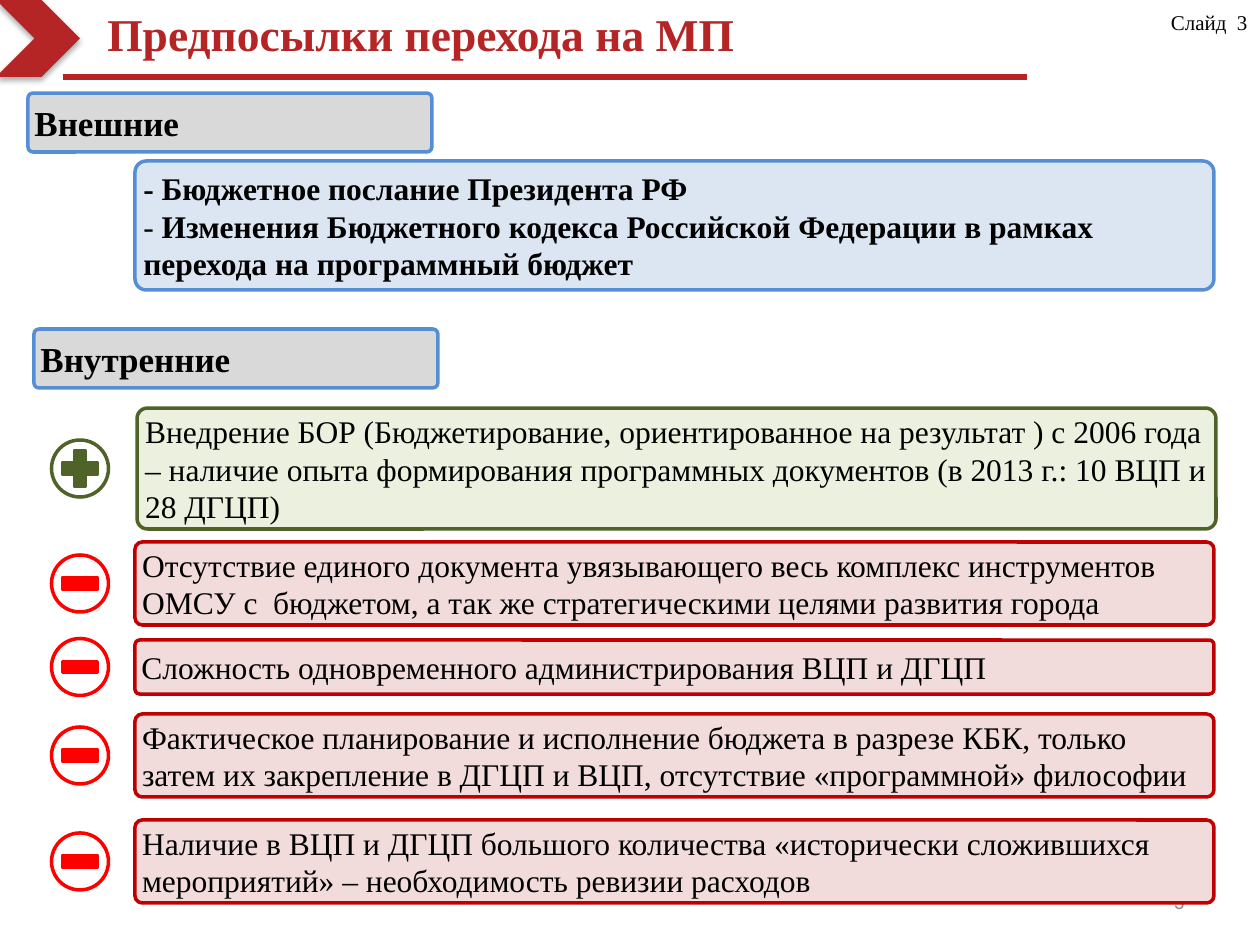
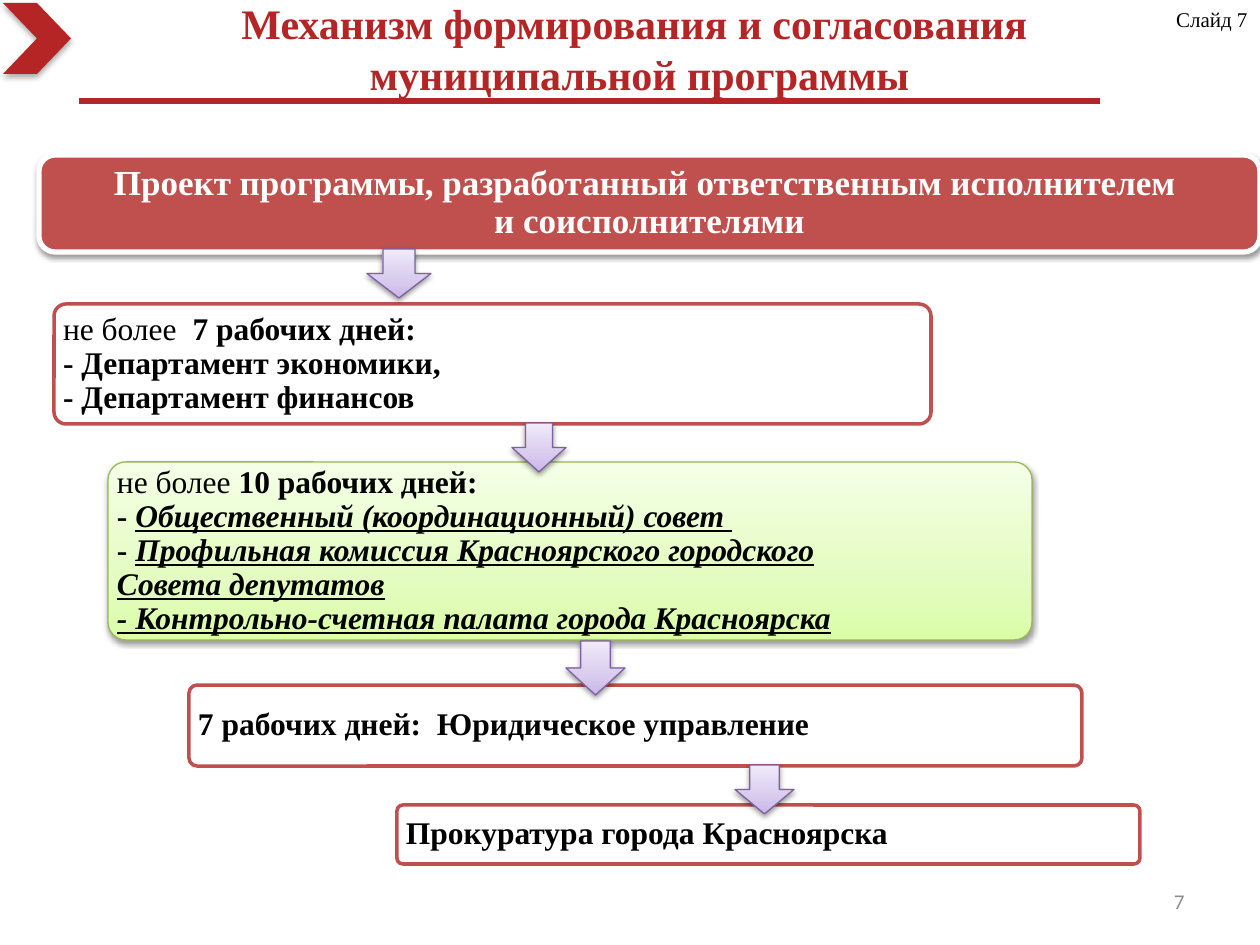
"""Build two slides on the move to municipal programmes."""
import lxml.etree
import pptx
import pptx.dml.color
import pptx.enum.shapes
import pptx.enum.text
import pptx.oxml.ns
import pptx.util

KIND = pptx.enum.shapes.MSO_SHAPE
ALIGN = pptx.enum.text.PP_ALIGN
ANCHOR = pptx.enum.text.MSO_ANCHOR


class Theme:
    font, plain = "Times New Roman", "Calibri"
    small, body, head, title, large = 12, 18, 20, 24, 26
    red, black, white, gray = "B52525", "000000", "FFFFFF", "8C8C8C"
    label = ("D9D9D9", "558ED5")
    blue = ("DCE6F2", "558ED5")
    good = ("EBF1DE", "4F6228")
    bad = ("F2DCDB", "C00000")
    plus, minus = "4F6228", "FF0000"
    step = ("FFFFFF", "C0504D")
    banner = ("C0504D", "FFFFFF")
    lime = ([(0, "DAFDA7"), (35, "E4FCC2"), (100, "F5FFE7")], "98B955")
    arrow = ([(0, "C9B5E8"), (35, "D8CBEE"), (100, "F0EAF9")], "7D60A0")
    deep, soft = (32, 3.5, 2.2), (38, 3.1, 1.6)


REASONS = {
    "title": "Предпосылки перехода на МП",
    "place": (95, 0, 888, 66), "size": Theme.large, "align": ALIGN.LEFT,
    "rule": (63, 1027, 77), "mark": (-4, 0, 84, 77),
    "label": "Слайд  3", "top": 3, "number": "3",
}
HEADS = [("Внешние", 28, 93), ("Внутренние", 34, 329)]
OUTER = [
    [("b", "- Бюджетное послание Президента РФ")],
    [("", "- "), ("b", "Изменения Бюджетного кодекса Российской Федерации в рамках "
                       "перехода на программный бюджет")],
]
INNER = [
    (True, 408, 121, "Внедрение БОР (Бюджетирование, ориентированное на результат ) с 2006 года "
     "– наличие опыта формирования программных документов (в 2013 г.: 10 ВЦП и 28 ДГЦП)"),
    (False, 542, 83, "Отсутствие единого документа увязывающего весь комплекс инструментов "
     "ОМСУ с  бюджетом, а так же стратегическими целями развития города"),
    (False, 640, 54, "Сложность одновременного администрирования ВЦП и ДГЦП"),
    (False, 714, 83, "Фактическое планирование и исполнение бюджета в разрезе КБК, только "
     "затем их закрепление в ДГЦП и ВЦП, отсутствие «программной» философии"),
    (False, 820, 83, "Наличие в ВЦП и ДГЦП большого количества «исторически сложившихся "
     "мероприятий» – необходимость ревизии расходов"),
]

PROCESS = {
    "title": "Механизм формирования и согласования  муниципальной программы",
    "place": (82, 0, 1115, 96), "size": Theme.title, "align": ALIGN.CENTER,
    "rule": (79, 1100, 101), "mark": (3, 3, 68, 71),
    "label": "Слайд 7", "top": 0, "number": "7",
}
DRAFT = "Проект программы, разработанный ответственным исполнителем \nи соисполнителями"
STEPS = [
    ((54, 304, 877, 120), Theme.step, [
        [("", "не более  "), ("b", "7 рабочих дней:\n- Департамент экономики,")],
        [("b", "- Департамент финансов")]]),
    ((108, 462, 924, 178), Theme.lime, [
        [("", "не более"), ("b", " 10 рабочих дней:\n- "),
         ("biu", "Общественный (координационный) совет \n"), ("b", "- "),
         ("biu", "Профильная комиссия Красноярского городского Совета депутатов\n"
                 "- Контрольно-счетная палата города Красноярска")]]),
    ((189, 685, 893, 81), Theme.step, [[("b", "7 рабочих дней:  Юридическое управление")]]),
    ((397, 805, 743, 59), Theme.step, [[("b", "Прокуратура города Красноярска")]]),
]
ARROWS = [(367, 249, 64, 49), (512, 423, 54, 49), (566, 641, 59, 54), (735, 765, 59, 49)]


def px(value):
    """Turn px into EMU."""
    return pptx.util.Emu(round(value * 914400 / 126))


def tint(code):
    """Turn a hex code into a colour."""
    return pptx.dml.color.RGBColor.from_string(code)


def node(parent, tag, **attrs):
    """Add a drawing element under a parent."""
    return lxml.etree.SubElement(parent, pptx.oxml.ns.qn("a:" + tag),
                                 {key: str(value) for key, value in attrs.items()})


def blend(shape, stops):
    """Fill a shape with colour stops that run upwards."""
    shape.fill.gradient()
    shape.fill.gradient_angle = 90
    track = shape._element.spPr.find(".//" + pptx.oxml.ns.qn("a:gsLst"))
    for old in list(track):
        track.remove(old)
    for place, code in stops:
        node(node(track, "gs", pos=place * 1000), "srgbClr", val=code)


def shade(shape, alpha, blur, drop):
    """Cast a shadow straight down."""
    effects = shape._element.spPr.find(pptx.oxml.ns.qn("a:effectLst"))
    cast = node(effects, "outerShdw", blurRad=pptx.util.Pt(blur), dist=pptx.util.Pt(drop),
                dir=5400000, rotWithShape=0)
    node(node(cast, "srgbClr", val=Theme.black), "alpha", val=alpha * 1000)


def draw(shapes, kind, box, fill=None, line=None, width=2, bend=None, cast=None):
    """Add a preset shape."""
    shape = shapes.add_shape(kind, *map(px, box))
    shape.shadow.inherit = False
    if bend is not None:
        shape.adjustments[0] = bend
    if fill is None:
        shape.fill.background()
    elif isinstance(fill, list):
        blend(shape, fill)
    else:
        shape.fill.solid()
        shape.fill.fore_color.rgb = tint(fill)
    if line is None:
        shape.line.fill.background()
    else:
        shape.line.color.rgb = tint(line)
        shape.line.width = pptx.util.Pt(width)
    if cast:
        shade(shape, *cast)
    return shape


def write(shape, text, size=Theme.body, color=Theme.black, font=Theme.font, style="",
          align=ALIGN.LEFT, anchor=ANCHOR.MIDDLE, pad=None, pitch=None):
    """Put a string or lists of styled runs into a shape."""
    frame = shape.text_frame
    frame.word_wrap = True
    frame.vertical_anchor = anchor
    if pad is not None:
        frame.margin_left = frame.margin_right = px(pad)
        frame.margin_top = frame.margin_bottom = px(pad)
    paras = [[(style, text)]] if isinstance(text, str) else text
    for index, runs in enumerate(paras):
        para = frame.add_paragraph() if index else frame.paragraphs[0]
        para.alignment = align
        if pitch:
            para.line_spacing = pitch
        for marks, words in runs:
            for turn, part in enumerate(words.split("\n")):
                if turn:
                    para.add_line_break()
                if not part:
                    continue
                run = para.add_run()
                run.text = part
                run.font.name = font
                run.font.size = pptx.util.Pt(size)
                run.font.color.rgb = tint(color)
                run.font.bold = "b" in marks
                run.font.italic = "i" in marks
                run.font.underline = "u" in marks


def note(slide, box, text, **look):
    """Add a text box."""
    write(slide.shapes.add_textbox(*map(px, box)), text, **look)


def start(deck, data):
    """Add a slide with its title, rule, mark and numbers."""
    slide = deck.slides.add_slide(deck.slide_layouts[6])
    note(slide, data["place"], data["title"], size=data["size"], color=Theme.red,
         style="b", align=data["align"])
    note(slide, (903, 876, 294, 50), data["number"], size=Theme.small, color=Theme.gray,
         font=Theme.plain, align=ALIGN.RIGHT)
    left, right, level = data["rule"]
    rule = slide.shapes.add_connector(pptx.enum.shapes.MSO_CONNECTOR.STRAIGHT,
                                      px(left), px(level), px(right), px(level))
    rule.line.color.rgb = tint(Theme.red)
    rule.line.width = pptx.util.Pt(3)
    node(rule._element.spPr, "effectLst")
    draw(slide.shapes, KIND.CHEVRON, data["mark"], Theme.red, cast=Theme.deep)
    note(slide, (1136, data["top"], 124, 38), data["label"], size=Theme.small,
         align=ALIGN.RIGHT, anchor=ANCHOR.TOP)
    return slide


def panel(slide, box, paint, text, **look):
    """Add a rounded panel with text inside."""
    shape = draw(slide.shapes, KIND.ROUNDED_RECTANGLE, box, *paint, bend=0.087)
    write(shape, text, pad=5, **look)


def badge(slide, middle, good):
    """Add a ringed plus or minus centred on a row."""
    group = slide.shapes.add_group_shape().shapes
    color = Theme.plus if good else Theme.minus
    sign = KIND.MATH_PLUS if good else KIND.MATH_MINUS
    for kind, side, fill in ((KIND.OVAL, 57, None), (sign, 48, color)):
        draw(group, kind, (80 - side / 2, middle - side / 2, side, side), fill, color)


def reasons(deck):
    """Build the slide of outer and inner reasons."""
    slide = start(deck, REASONS)
    for text, left, top in HEADS:
        panel(slide, (left, top, 404, 59), Theme.label, text, size=Theme.head, style="b")
    panel(slide, (135, 161, 1079, 129), Theme.blue, OUTER)
    for good, top, height, text in INNER:
        left, paint = (137, Theme.good) if good else (135, Theme.bad)
        panel(slide, (left, top, 1079, height), paint, text)
        badge(slide, top + height / 2, good)


def process(deck):
    """Build the slide of approval steps."""
    slide = start(deck, PROCESS)
    for (left, top, width, height), paint, text in STEPS:
        lime = paint is Theme.lime
        draw(slide.shapes, KIND.ROUNDED_RECTANGLE, (left, top, width, height), *paint,
             width=0.75 if lime else 2, bend=0.1, cast=Theme.soft if lime else None)
        note(slide, (left, top, round(width * 0.81), height), text, pad=9, pitch=0.9)
    banner = draw(slide.shapes, KIND.ROUNDED_RECTANGLE, (39, 155, 1221, 97),
                  *Theme.banner, width=3, cast=Theme.soft)
    write(banner, DRAFT, size=Theme.head, color=Theme.white, style="b",
          align=ALIGN.CENTER, pad=10, pitch=0.9)
    for box in ARROWS:
        draw(slide.shapes, KIND.DOWN_ARROW, box, *Theme.arrow, width=0.75, cast=Theme.soft)


def main():
    """Build and save the deck."""
    deck = pptx.Presentation()
    deck.slide_width, deck.slide_height = px(1260), px(945)
    reasons(deck)
    process(deck)
    deck.save("out.pptx")


if __name__ == "__main__":
    main()
